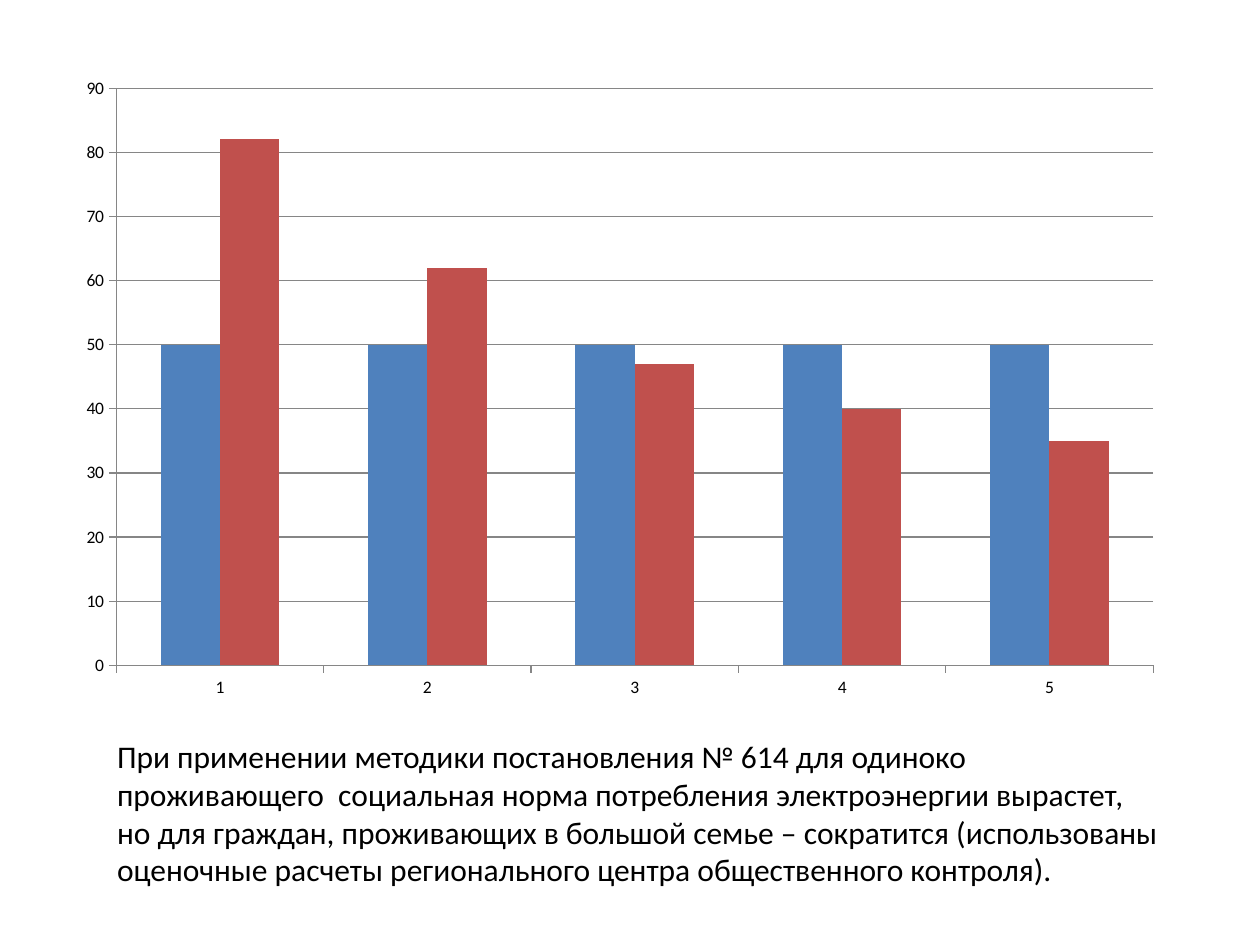
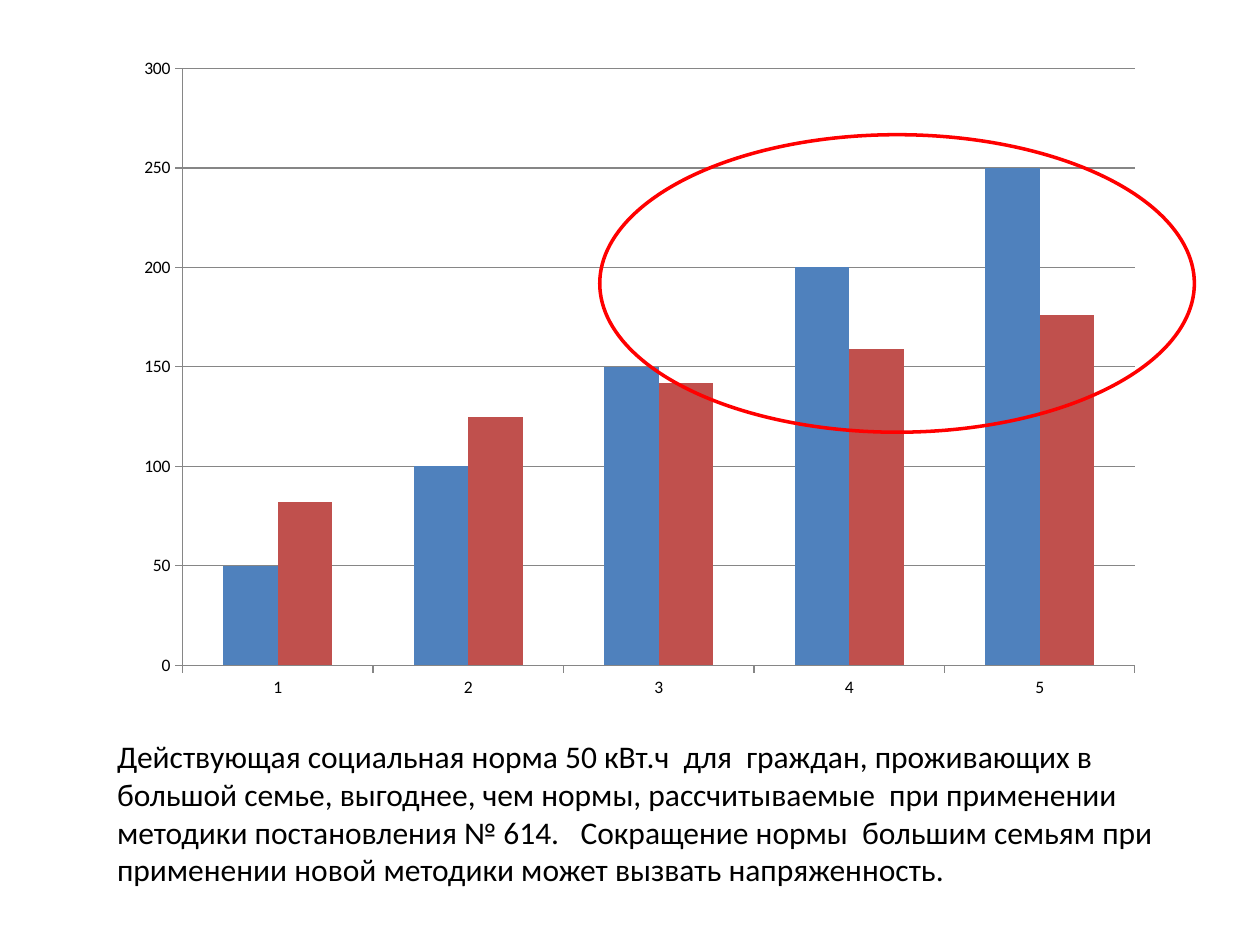
"""Builds two slides comparing the current electricity norm with the new method."""
from dataclasses import dataclass

from pptx import Presentation
from pptx.chart.data import CategoryChartData
from pptx.dml.color import RGBColor
from pptx.enum.chart import XL_CHART_TYPE, XL_TICK_MARK
from pptx.enum.shapes import MSO_SHAPE
from pptx.enum.text import MSO_AUTO_SIZE
from pptx.util import Pt

COLUMNS = XL_CHART_TYPE.COLUMN_CLUSTERED
TICK_OUT, TICK_NONE = XL_TICK_MARK.OUTSIDE, XL_TICK_MARK.NONE
ELLIPSE = MSO_SHAPE.OVAL
GROW = MSO_AUTO_SIZE.SHAPE_TO_FIT_TEXT


@dataclass(frozen=True)
class Theme:
    """Colours, font and type sizes of the slides."""
    background: RGBColor = RGBColor(0xFF, 0xFF, 0xFF)
    text: RGBColor = RGBColor(0, 0, 0)
    grid: RGBColor = RGBColor(0x86, 0x86, 0x86)
    series: tuple = (RGBColor(0x4F, 0x81, 0xBD), RGBColor(0xC0, 0x50, 0x4D))
    highlight: RGBColor = RGBColor(0xFF, 0, 0)
    font: str = "Calibri"
    chart_size: int = 10
    caption_size: int = 18


THEME = Theme()
HOUSEHOLD_SIZES = ("1", "2", "3", "4", "5")
CAPTION_BOX = (59.8, 417.6, 612, 94.3)


def points(box):
    """Turn a box of numbers into lengths in points."""
    return [Pt(value) for value in box]


def style_font(font, size):
    """Apply the theme's typeface and text colour at a size."""
    font.name = THEME.font
    font.size = Pt(size)
    font.color.rgb = THEME.text


def style_line(line, color, width):
    """Give a line its colour and width."""
    line.color.rgb = color
    line.width = Pt(width)


def add_slide(prs):
    """Add a blank slide with the theme's background."""
    s = prs.slides.add_slide(prs.slide_layouts[6])
    s.background.fill.solid()
    s.background.fill.fore_color.rgb = THEME.background
    return s


def add_norm_chart(s, box, current, proposed, top, step):
    """Add columns of the current and proposed norms by household size."""
    data = CategoryChartData()
    data.categories = HOUSEHOLD_SIZES
    data.add_series("Series 1", current)
    data.add_series("Series 2", proposed)
    chart = s.shapes.add_chart(COLUMNS, *points(box), data).chart
    chart.has_legend = False
    chart.has_title = False
    style_font(chart.font, THEME.chart_size)

    plot = chart.plots[0]
    plot.gap_width = 150
    plot.overlap = 0
    plot.vary_by_categories = False
    for series, color in zip(plot.series, THEME.series):
        series.format.fill.solid()
        series.format.fill.fore_color.rgb = color
        series.invert_if_negative = False

    for axis in (chart.category_axis, chart.value_axis):
        axis.major_tick_mark = TICK_OUT
        axis.minor_tick_mark = TICK_NONE
        style_line(axis.format.line, THEME.grid, 0.75)
    values = chart.value_axis
    values.minimum_scale, values.maximum_scale = 0, top
    values.major_unit = step
    values.has_major_gridlines = True
    style_line(values.major_gridlines.format.line, THEME.grid, 0.75)


def add_caption(s, *lines):
    """Add the conclusion below the chart, with breaks between lines."""
    tf = s.shapes.add_textbox(*points(CAPTION_BOX)).text_frame
    tf.word_wrap = True
    tf.auto_size = GROW
    p = tf.paragraphs[0]
    for number, line in enumerate(lines):
        if number:
            p.add_line_break()
        r = p.add_run()
        r.text = line
        style_font(r.font, THEME.caption_size)


def add_highlight(s, box):
    """Circle a part of the chart with an unfilled ellipse."""
    sp = s.shapes.add_shape(ELLIPSE, *points(box))
    sp.shadow.inherit = False
    sp.fill.background()
    style_line(sp.line, THEME.highlight, 2)


def main():
    """Build and save the presentation."""
    prs = Presentation()
    prs.slide_width, prs.slide_height = Pt(720), Pt(540)

    s = add_slide(prs)
    add_norm_chart(s, (36.7, 37.4, 635, 368.6), (50,) * 5,
                   (82, 62, 47, 40, 35), top=90, step=10)
    add_caption(
        s,
        "При применении методики постановления № 614 для одиноко проживающего  "
        "социальная норма потребления электроэнергии вырастет,",
        "но для граждан, проживающих в большой семье – сократится "
        "(использованы оценочные расчеты регионального центра "
        "общественного контроля).")

    s = add_slide(prs)
    add_norm_chart(s, (70.6, 25.9, 589.7, 380.2), (50, 100, 150, 200, 250),
                   (82, 125, 142, 159, 176), top=300, step=50)
    add_caption(
        s,
        "Действующая социальная норма 50 кВт.ч  для  граждан, проживающих в "
        "большой семье, выгоднее, чем нормы, рассчитываемые  при применении "
        "методики постановления № 614.   Сокращение нормы  большим семьям при "
        "применении новой методики может вызвать напряженность.")
    add_highlight(s, (342.7, 77, 339.8, 170))

    prs.save("out.pptx")


if __name__ == "__main__":
    main()
